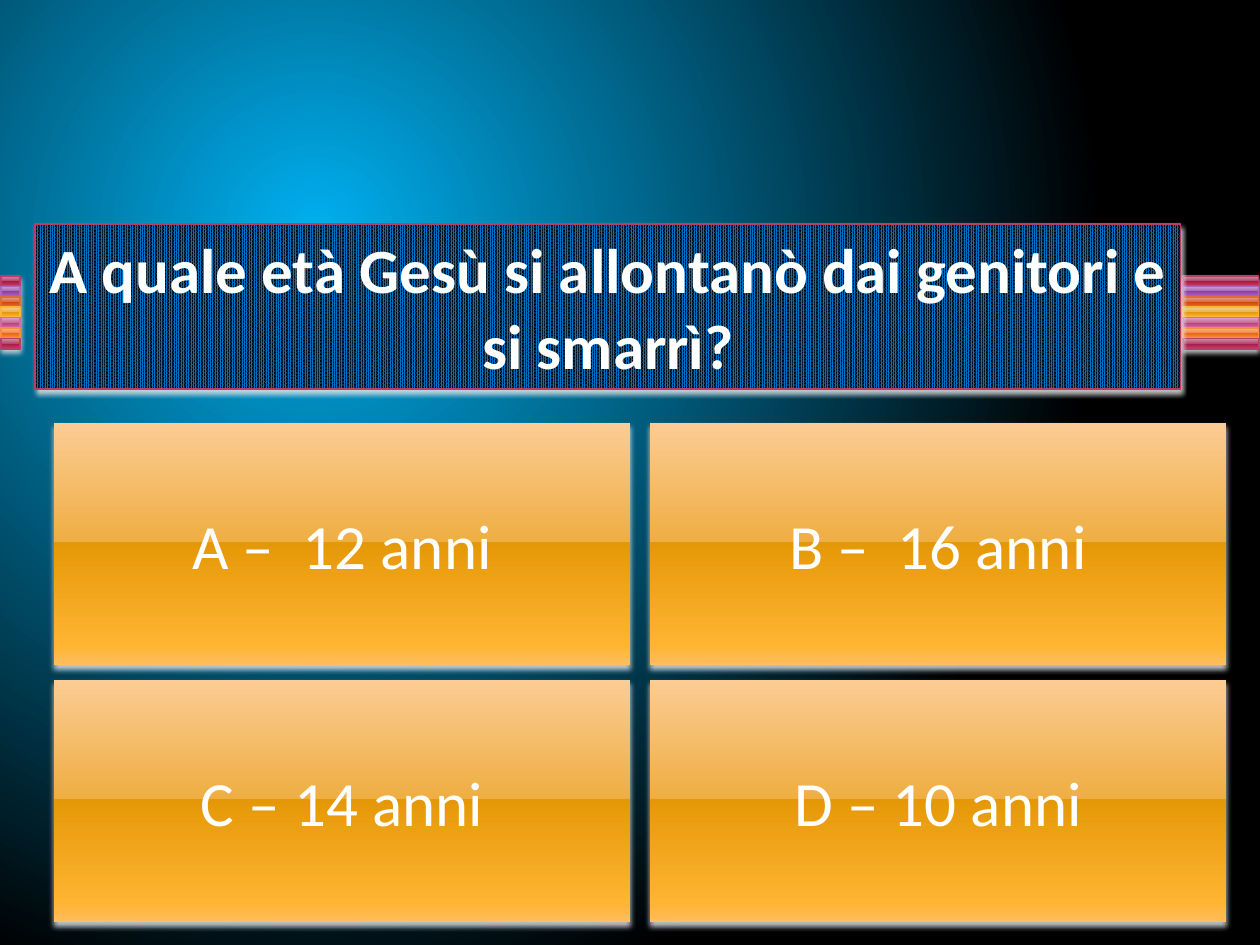
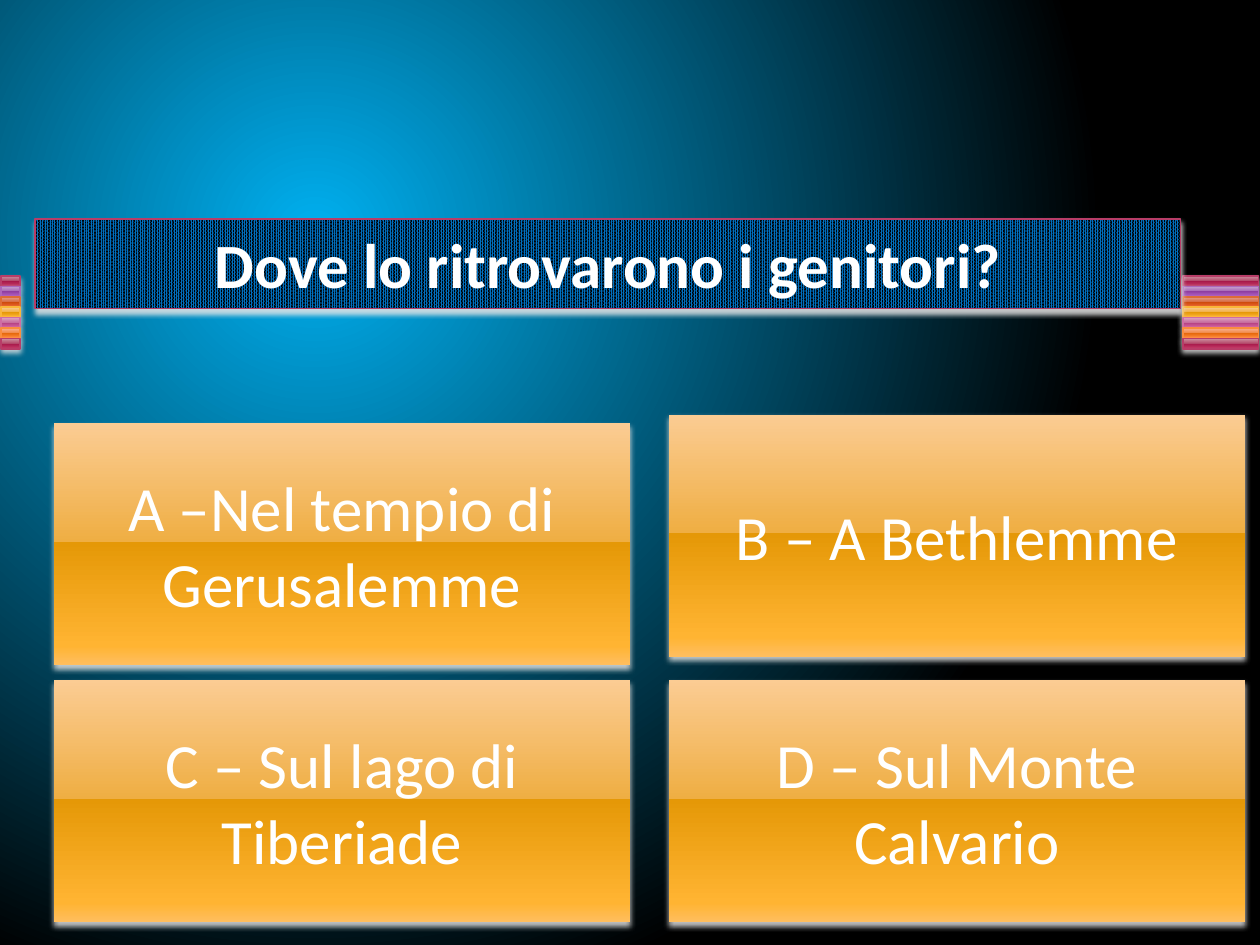
from lxml import etree
from pptx import Presentation
from pptx.dml.color import RGBColor
from pptx.enum.dml import MSO_PATTERN
from pptx.enum.shapes import MSO_SHAPE
from pptx.enum.text import MSO_ANCHOR, MSO_AUTO_SIZE, PP_ALIGN
from pptx.oxml.ns import qn
from pptx.util import Inches, Pt

RECT = MSO_SHAPE.RECTANGLE
PCT90 = MSO_PATTERN.PERCENT_90
TOP, MIDDLE = MSO_ANCHOR.TOP, MSO_ANCHOR.MIDDLE
CENTER = PP_ALIGN.CENTER
GROW = MSO_AUTO_SIZE.SHAPE_TO_FIT_TEXT

FONT = "Calibri"
WHITE = "FFFFFF"
GLOW = "E6E6E6"
BANNER_FG, BANNER_BG = "0070C0", "000000"
BACKDROP = [(0, "00B0F0"), (100, "000000")]

# Glossy gradients: the colours at each of the positions, then the outline
GLOSS_STOPS = (0, 49, 49, 92, 100)
MAGENTA = ("CE94A2", "B34869", "A61749", "C13764", "CA5D7C"), "B83D68"
PURPLE = ("C6A2D0", "A666B4", "8F3EA1", "AD5DBF", "BA76CA"), "AC66BB"
RUST = ("E7A493", "D66B42", "CC4809", "E9642C", "F07B55"), "DE6C36"
AMBER = ("FBCC93", "EFAE43", "E59807", "FFB432", "FFBE5F"), "F9B639"
PINK = ("DDA4C1", "C66B9D", "B34181", "D361A0", "DC79AE"), "CF6DA4"
ORANGE = ("FBB494", "F08745", "E5670B", "FF8736", "FF9961"), "FA8D3D"
STRIPES = (MAGENTA, PURPLE, RUST, AMBER, PINK, ORANGE, MAGENTA)


def rgb(color):
    return RGBColor.from_string(color)


def sub(parent, tag, **attrs):
    return etree.SubElement(parent, qn(tag), {k: str(v) for k, v in attrs.items()})


def set_gradient(fill, holder, stops, focus=None):
    """Fill with a vertical gradient, or a circular one around the focus rectangle."""
    fill.solid()
    fill.fore_color.rgb = rgb(WHITE)
    grad = etree.Element(qn("a:gradFill"), rotWithShape="1")
    gs_lst = sub(grad, "a:gsLst")
    for pos, color in stops:
        gs = sub(gs_lst, "a:gs", pos=pos * 1000)
        sub(gs, "a:srgbClr", val=color)
    if focus:
        path = sub(grad, "a:path", path="circle")
        sub(path, "a:fillToRect", **{side: v * 1000 for side, v in zip("ltrb", focus)})
    else:
        sub(grad, "a:lin", ang=90 * 60000, scaled=0)
    holder.replace(holder.find(qn("a:solidFill")), grad)


def add_glow(shape):
    shape.shadow.inherit = False
    effects = shape._element.spPr.find(qn("a:effectLst"))
    shadow = sub(effects, "a:outerShdw", blurRad=Pt(3.1), dist=Pt(2),
                 dir=90 * 60000, rotWithShape=0)
    sub(sub(shadow, "a:srgbClr", val=GLOW), "a:alpha", val=83000)


def add_box(shapes, x, y, w, h, line=None):
    shape = shapes.add_shape(RECT, Inches(x), Inches(y), Inches(w), Inches(h))
    if line:
        shape.line.color.rgb = rgb(line)
        shape.line.width = Pt(0.9)
    else:
        shape.line.fill.background()
    return shape


def add_glossy(shapes, x, y, w, h, gloss, outlined=False):
    colors, line = gloss
    shape = add_box(shapes, x, y, w, h, line if outlined else None)
    set_gradient(shape.fill, shape._element.spPr, zip(GLOSS_STOPS, colors))
    add_glow(shape)
    return shape


def write(shape, text, size=36, bold=False, color=WHITE, anchor=MIDDLE):
    tf = shape.text_frame
    tf.word_wrap = True
    tf.vertical_anchor = anchor
    p = tf.paragraphs[0]
    p.alignment = CENTER
    r = p.add_run()
    r.text = text
    r.font.name = FONT
    r.font.size = Pt(size)
    r.font.bold = bold
    r.font.color.rgb = rgb(color)


def add_ribbon(s, x, y, w, h):
    """Stack the coloured stripes, from the top down, in one group."""
    group = s.shapes.add_group_shape()
    pitch = h / len(STRIPES)
    for i, gloss in enumerate(STRIPES):
        add_glossy(group.shapes, x, y + i * pitch, w, pitch, gloss, outlined=True)


def add_question(s, text, x, y, w, h):
    banner = add_box(s.shapes, x, y, w, h, line=MAGENTA[1])
    banner.fill.patterned()
    banner.fill.pattern = PCT90
    banner.fill.fore_color.rgb = rgb(BANNER_FG)
    banner.fill.back_color.rgb = rgb(BANNER_BG)
    add_glow(banner)
    write(banner, text, bold=True, anchor=TOP)
    banner.text_frame.auto_size = GROW


def add_answers(s, answers, x, y, gap, lift_b):
    """Place four answers two by two; lift_b raises the second one."""
    w, h, row_gap = 4.57, 1.92, 0.12
    for i, text in enumerate(answers):
        row, col = divmod(i, 2)
        top = y + row * (h + row_gap) - (lift_b if i == 1 else 0)
        write(add_glossy(s.shapes, x + col * (w + gap), top, w, h, AMBER), text)


def add_quiz_slide(prs, question, answers, banner_top, banner_height, gap, lift_b=0):
    s = prs.slides.add_slide(prs.slide_layouts[6])
    add_ribbon(s, 0.01, 2.19, 0.15, 0.58)
    add_ribbon(s, 9.39, 2.19, 0.6, 0.58)
    add_answers(s, answers, 0.43, 3.36, gap, lift_b)
    add_question(s, question, 0.28, banner_top, 9.09, banner_height)


def main():
    prs = Presentation()
    prs.slide_width, prs.slide_height = Inches(10), Inches(7.5)
    master = prs.slide_master
    fill = master.background.fill
    fill.solid()
    set_gradient(fill, master.element.find(".//" + qn("p:bgPr")), BACKDROP,
                 focus=(50, 50, 100, 100))

    add_quiz_slide(prs, "A quale età Gesù si allontanò dai genitori e si smarrì?",
                   ["A –  12 anni", "B –  16 anni", "C – 14 anni", "D – 10 anni"],
                   banner_top=1.78, banner_height=1.31, gap=0.16)
    add_quiz_slide(prs, "Dove lo ritrovarono i genitori?",
                   ["A –Nel tempio di Gerusalemme", "B – A Bethlemme",
                    "C – Sul lago di Tiberiade", "D – Sul Monte Calvario"],
                   banner_top=1.74, banner_height=0.71, gap=0.31, lift_b=0.07)
    prs.save("out.pptx")


if __name__ == "__main__":
    main()
